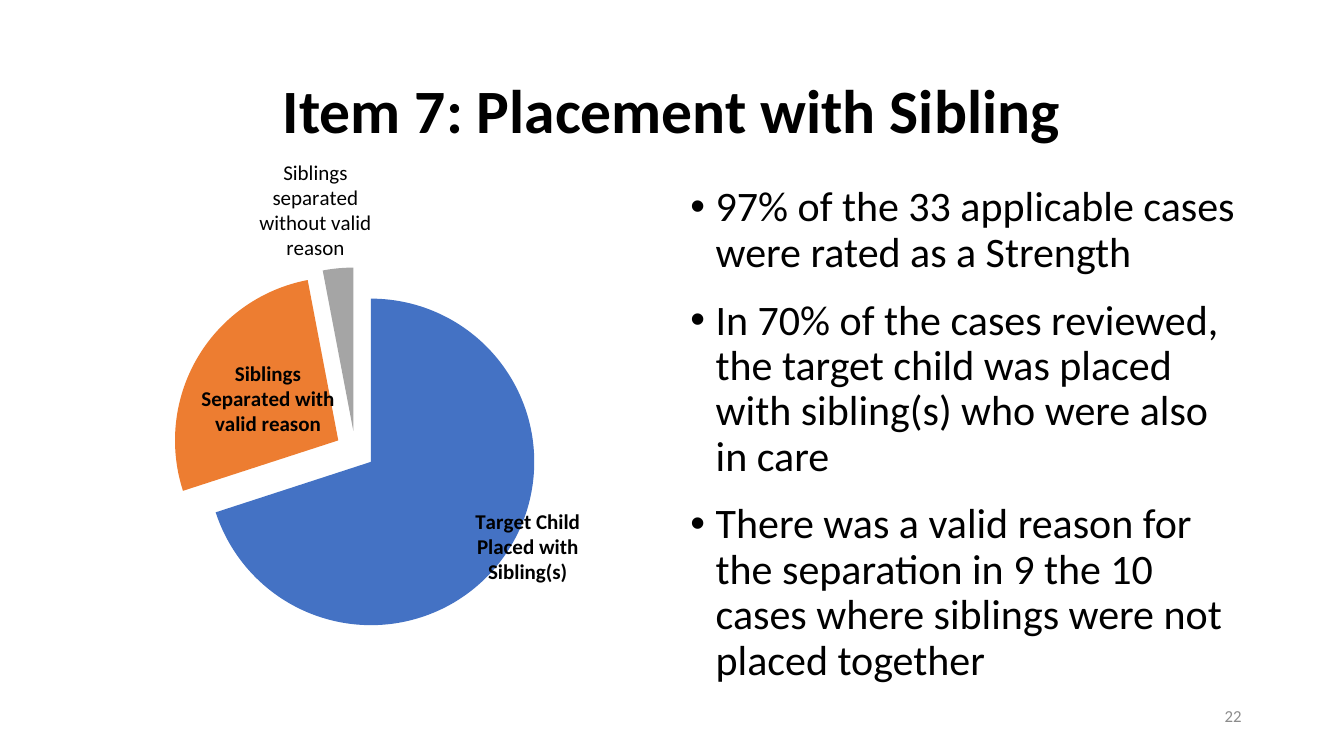
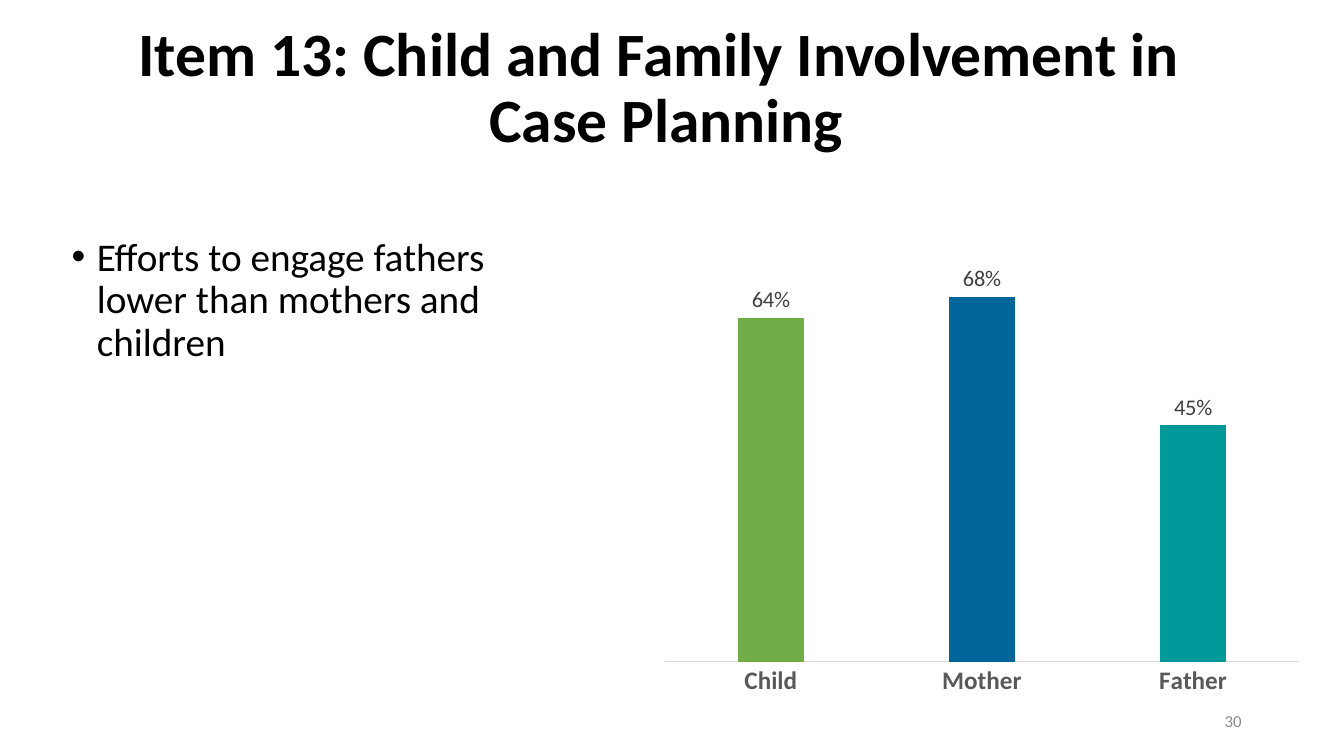
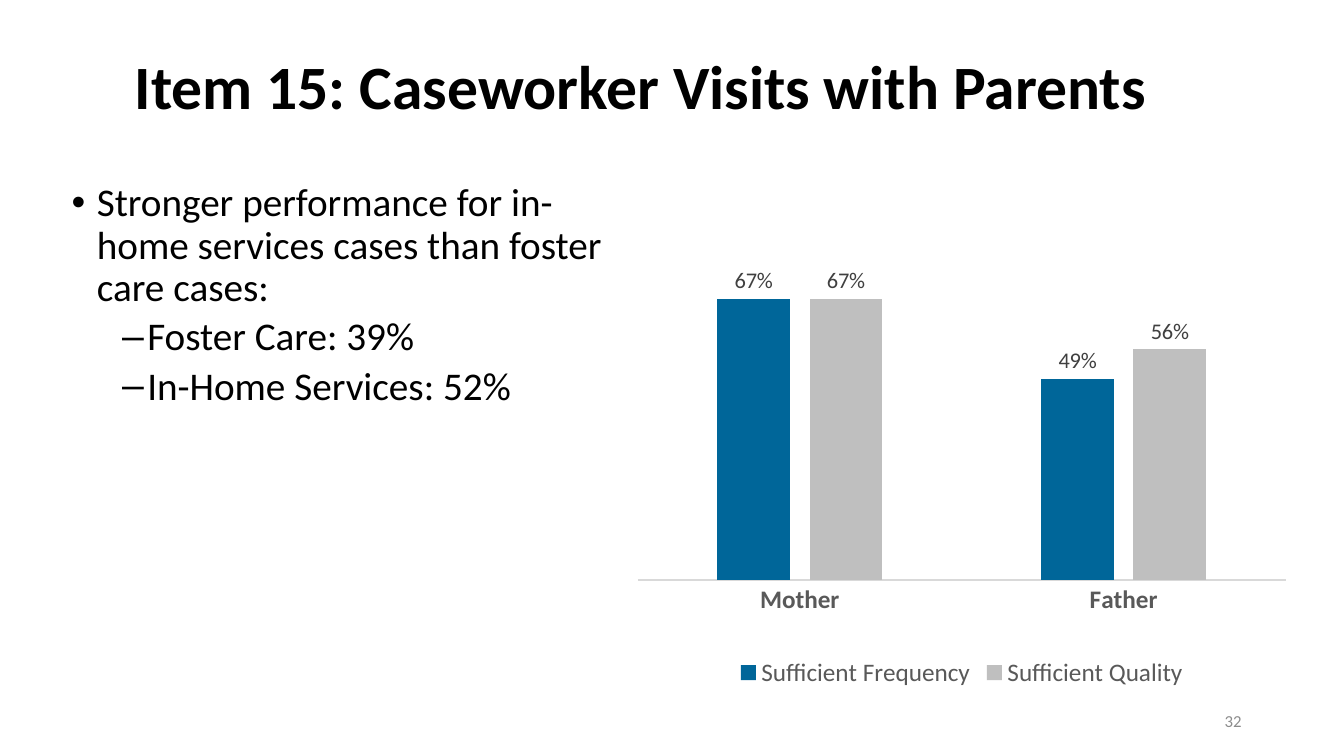
"""Build three case review slides with bullets and charts."""
from dataclasses import dataclass

from lxml import etree
from pptx import Presentation
from pptx.chart import data as cd
from pptx.dml.color import RGBColor
from pptx.enum import chart as ch, text as tx
from pptx.oxml import ns
from pptx.util import Pt


@dataclass(frozen=True)
class Theme:
    font: str = "Calibri"
    ink: str = "000000"
    label: str = "404040"
    axis: str = "595959"
    rule: str = "D9D9D9"
    number: str = "8C8C8C"
    title_size: int = 44
    number_size: int = 12
    pie_size: int = 15
    value_size: int = 16
    axis_size: int = 18


T = Theme()

SLIDES = [
    dict(
        title="Item 7: Placement with Sibling", title_box=(66, 29, 828, 104),
        body=[
            (0, "97% of the 33 applicable cases were rated as a Strength"),
            (0, "In 70% of the cases reviewed, the target child was placed "
                "with sibling(s) who were also in care"),
            (0, "There was a valid reason for the separation in 9 the 10 cases "
                "where siblings were not placed together"),
        ],
        body_box=(486, 129, 408, 382), body_size=30, space_after=6,
        number="22", number_top=497,
        chart=dict(
            kind="pie", box=(42, 104, 432, 382), plot=(0.22, 0.26, 0.54, 0.62),
            cats=["Target Child Placed with Sibling(s)",
                  "Siblings Separated with valid reason",
                  "Siblings Separated with valid reason"],
            values=[70, 27, 3], colors=["4472C4", "ED7D31", "A5A5A5"], explosion=12,
            labels={
                0: ("Target Child Placed with Sibling(s)", True, (0.15, 0.07)),
                2: ("Siblings separated without valid reason", False, (-0.05, -0.26)),
            },
        ),
    ),
    dict(
        title="Item 13: Child and Family Involvement in \vCase Planning",
        title_box=(24, 12, 904, 104),
        body=[(0, "Efforts to engage fathers lower than mothers and children")],
        body_box=(44, 166, 364, 329), body_size=28, space_after=0,
        number="30", number_top=500,
        chart=dict(
            kind="column", box=(466, 85, 462, 426), plot=(0.02, 0.01, 0.98, 0.9),
            cats=["Child", "Mother", "Father"], legend=False,
            series=[("Series 1", [0.64, 0.68, 0.44], ["64%", "68%", "45%"],
                     "006699", {0: "70AD47", 2: "009999"})],
        ),
    ),
    dict(
        title="Item 15: Caseworker Visits with Parents", title_box=(44, 12, 828, 104),
        body=[
            (0, "Stronger performance for in-home services cases than foster care cases:"),
            (1, "Foster Care: 39%"),
            (1, "In-Home Services: 52%"),
        ],
        body_box=(44, 127, 402, 369), body_size=28, space_after=0,
        number="32", number_top=500,
        chart=dict(
            kind="column", box=(446, 111, 482, 384), plot=(0.02, 0.01, 0.96, 0.78),
            cats=["Mother", "Father"], legend=True,
            series=[("Sufficient Frequency", [0.67, 0.48], ["67%", "49%"], "006699", {}),
                    ("Sufficient Quality", [0.67, 0.55], ["67%", "56%"], "BFBFBF", {})],
        ),
    ),
]


def style(font, size, color=T.ink, bold=False):
    font.name, font.size, font.bold = T.font, Pt(size), bold
    font.color.rgb = RGBColor.from_string(color)


def place(sp, box):
    sp.left, sp.top, sp.width, sp.height = map(Pt, box)


def paint(fmt, color):
    fmt.fill.solid()
    fmt.fill.fore_color.rgb = RGBColor.from_string(color)


def make_layout(**values):
    layout = etree.Element(ns.qn("c:layout"))
    manual = etree.SubElement(layout, ns.qn("c:manualLayout"))
    for name, value in values.items():
        etree.SubElement(manual, ns.qn("c:" + name)).set("val", str(value))
    return layout


def set_plot(chart, box):
    area = chart.plots[0]._element.getparent()
    for old in area.findall(ns.qn("c:layout")):
        area.remove(old)
    x, y, w, h = box
    area.insert(0, make_layout(layoutTarget="inner", xMode="edge", yMode="edge",
                               x=x, y=y, w=w, h=h))


def label_series(ser, size, color, number_format, position, by_category=False):
    labels = ser.data_labels
    labels.show_category_name, labels.show_value = by_category, not by_category
    labels.number_format, labels.number_format_is_linked = number_format, False
    labels.position = position
    style(labels.font, size, color, True)


def label_point(point, text, size, color, bold, position):
    label = point.data_label
    tf = label.text_frame
    tf.text = text
    style(tf.paragraphs[0].runs[0].font, size, color, bold)
    label.position = position


def add_chart(s, kind, cats, series, box, plot, number_format):
    chart_data = cd.CategoryChartData(number_format=number_format)
    chart_data.categories = cats
    for name, values in series:
        chart_data.add_series(name, values)
    chart = s.shapes.add_chart(kind, *map(Pt, box), chart_data).chart
    chart.has_title = chart.has_legend = False
    style(chart.font, 10)
    set_plot(chart, plot)
    return chart


def add_pie(s, c):
    chart = add_chart(s, ch.XL_CHART_TYPE.PIE, c["cats"], [("Series 1", c["values"])],
                      c["box"], c["plot"], "General")
    ser = chart.plots[0].series[0]
    center = ch.XL_LABEL_POSITION.CENTER
    label_series(ser, T.pie_size, T.ink, "0.00%", center, by_category=True)
    for i, color in enumerate(c["colors"]):
        paint(ser.points[i].format, color)
        dpt = ser._element.findall(ns.qn("c:dPt"))[i]
        explosion = etree.Element(ns.qn("c:explosion"))
        explosion.set("val", str(c["explosion"]))
        dpt.find(ns.qn("c:spPr")).addprevious(explosion)
    for i, (text, bold, (dx, dy)) in c["labels"].items():
        label_point(ser.points[i], text, T.pie_size, T.ink, bold, center)
        dlbl = ser._element.findall(".//" + ns.qn("c:dLbl"))[-1]
        dlbl.find(ns.qn("c:idx")).addnext(make_layout(x=dx, y=dy))
    for leader in ser._element.iter(ns.qn("c:showLeaderLines")):
        leader.set("val", "0")


def add_columns(s, c):
    chart = add_chart(s, ch.XL_CHART_TYPE.COLUMN_CLUSTERED, c["cats"],
                      [row[:2] for row in c["series"]], c["box"], c["plot"], "0%")
    plot = chart.plots[0]
    plot.vary_by_categories = False
    plot.gap_width, plot.overlap = 219, -27
    outside = ch.XL_LABEL_POSITION.OUTSIDE_END
    for ser, (_, _, labels, color, point_colors) in zip(plot.series, c["series"]):
        paint(ser.format, color)
        for i, point_color in point_colors.items():
            paint(ser.points[i].format, point_color)
        label_series(ser, T.value_size, T.label, "0%", outside)
        for i, label in enumerate(labels):
            label_point(ser.points[i], label, T.value_size, T.label, False, outside)
    cat, val = chart.category_axis, chart.value_axis
    cat.major_tick_mark = ch.XL_TICK_MARK.NONE
    style(cat.tick_labels.font, T.axis_size, T.axis, True)
    cat.format.line.color.rgb = RGBColor.from_string(T.rule)
    cat.format.line.width = Pt(0.75)
    val.minimum_scale, val.maximum_scale = 0, 1
    val.has_major_gridlines = val.visible = False
    val.tick_labels.number_format = "0%"
    val.tick_labels.number_format_is_linked = False
    if c["legend"]:
        chart.has_legend = True
        chart.legend.position = ch.XL_LEGEND_POSITION.BOTTOM
        chart.legend.include_in_layout = False
        style(chart.legend.font, T.axis_size, T.axis)


def add_title(s, title, box):
    sp = s.shapes.title
    place(sp, box)
    tf = sp.text_frame
    tf.text = title
    tf.auto_size = tx.MSO_AUTO_SIZE.NONE
    tf.vertical_anchor = tx.MSO_ANCHOR.MIDDLE
    p = tf.paragraphs[0]
    p.alignment, p.line_spacing = tx.PP_ALIGN.CENTER, 0.9
    for r in p.runs:
        style(r.font, T.title_size, bold=True)


def add_body(s, items, box, size, space_after):
    sp = s.placeholders[1]
    place(sp, box)
    tf = sp.text_frame
    tf.text = "\n".join(line for _, line in items)
    tf.auto_size = tx.MSO_AUTO_SIZE.NONE
    for p, (level, _) in zip(tf.paragraphs, items):
        p.level, p.line_spacing = level, 0.9
        p.space_before, p.space_after = Pt(5 if level else 10), Pt(space_after)
        pPr = p._p.get_or_add_pPr()
        pPr.set("marL", str(Pt(18 + 36 * level)))
        pPr.set("indent", str(Pt(-18)))
        style(p.runs[0].font, size)


def add_number(s, number, top):
    tf = s.shapes.add_textbox(Pt(678), Pt(top), Pt(216), Pt(29)).text_frame
    tf.text, tf.word_wrap = number, True
    tf.vertical_anchor = tx.MSO_ANCHOR.MIDDLE
    p = tf.paragraphs[0]
    p.alignment = tx.PP_ALIGN.RIGHT
    style(p.runs[0].font, T.number_size, T.number)


def main():
    prs = Presentation()
    prs.slide_width, prs.slide_height = Pt(960), Pt(540)
    chart_makers = dict(pie=add_pie, column=add_columns)
    for d in SLIDES:
        s = prs.slides.add_slide(prs.slide_layouts[1])
        add_title(s, d["title"], d["title_box"])
        chart_makers[d["chart"]["kind"]](s, d["chart"])
        add_body(s, d["body"], d["body_box"], d["body_size"], d["space_after"])
        add_number(s, d["number"], d["number_top"])
    prs.save("out.pptx")


if __name__ == "__main__":
    main()
